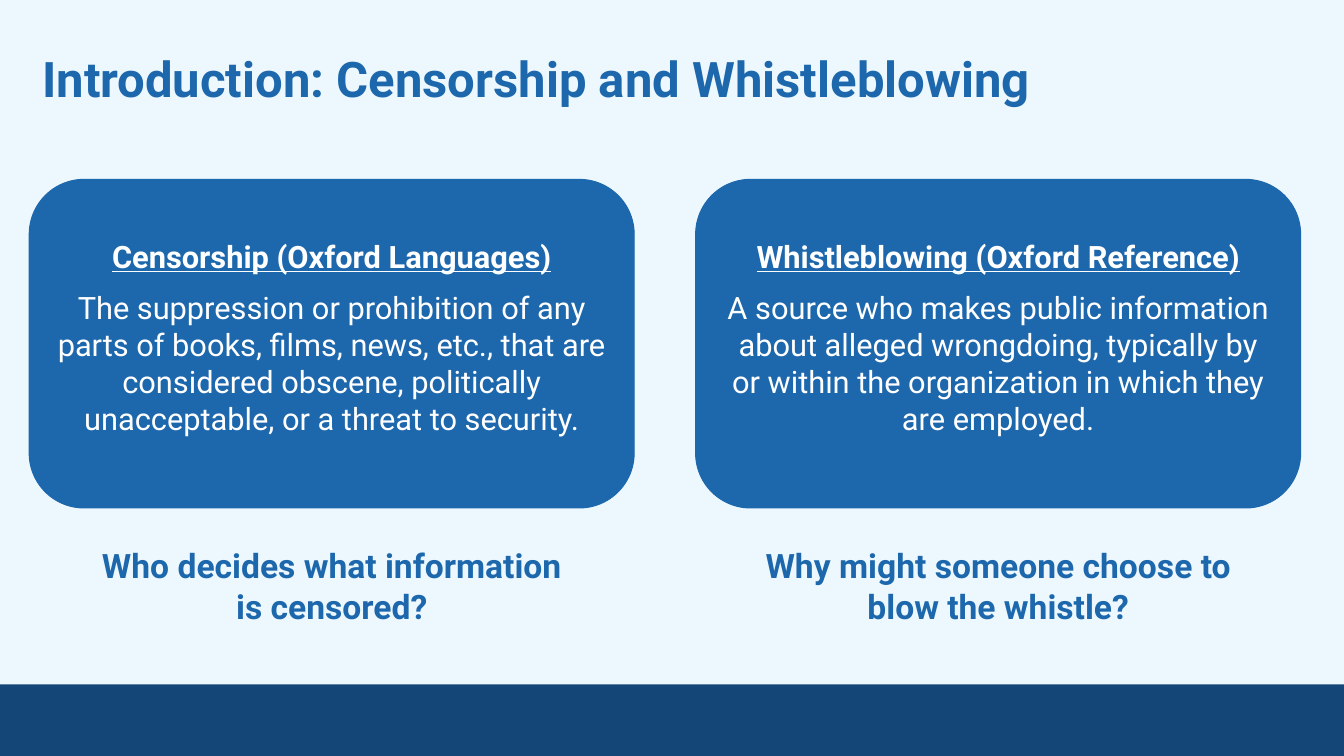
from pptx import Presentation
from pptx.dml.color import RGBColor
from pptx.enum.shapes import MSO_SHAPE
from pptx.enum.text import MSO_ANCHOR, PP_ALIGN
from pptx.util import Inches, Pt

COLORS = {"background": "ECF8FE", "blue": "1D67AC", "navy": "144777", "white": "FFFFFF"}
COLUMNS = [
    (
        0.29,
        0.63,
        "Censorship (Oxford Languages)",
        "The suppression or prohibition of any parts of books, films, news, etc., that are "
        "considered obscene, politically unacceptable, or a threat to security.",
        ["Who decides what information", "is censored?"],
    ),
    (
        6.9,
        7.24,
        "Whistleblowing (Oxford Reference)",
        "A source who makes public information about alleged wrongdoing, typically by or "
        "within the organization in which they are employed.",
        ["Why might someone choose to blow the whistle?"],
    ),
]


def add_span(para, text, size, color, bold=True, align=PP_ALIGN.CENTER):
    """Add one formatted run and align its paragraph."""
    para.alignment = align
    span = para.add_run()
    span.text = text
    span.font.name = "Roboto"
    span.font.size = Pt(size)
    span.font.bold = bold
    span.font.color.rgb = RGBColor.from_string(COLORS[color])
    return span


def add_panel(kind, left, top, width, height, color):
    panel = page.shapes.add_shape(kind, Inches(left), Inches(top), Inches(width), Inches(height))
    panel.shadow.inherit = False
    panel.fill.solid()
    panel.fill.fore_color.rgb = RGBColor.from_string(COLORS[color])
    panel.line.color.rgb = RGBColor.from_string(COLORS[color])
    panel.line.width = Pt(0.75)
    return panel


deck = Presentation()
deck.slide_width, deck.slide_height = Inches(13.33), Inches(7.5)
page = deck.slides.add_slide(deck.slide_layouts[5])
page.background.fill.solid()
page.background.fill.fore_color.rgb = RGBColor.from_string(COLORS["background"])

footer_band = add_panel(MSO_SHAPE.RECTANGLE, 0, 6.79, 13.33, 0.71, "navy")
footer_band.line.fill.background()

title = page.shapes.title
title.left, title.top = Inches(0.29), Inches(0.35)
title.width, title.height = Inches(12.19), Inches(0.86)
frame = title.text_frame
frame.vertical_anchor = MSO_ANCHOR.TOP
frame.margin_left = frame.margin_right = frame.margin_top = frame.margin_bottom = Inches(0.13)
add_span(frame.paragraphs[0], "Introduction: Censorship and Whistleblowing", 35, "blue",
         align=PP_ALIGN.LEFT)

for card_left, question_left, term, definition, question in COLUMNS:
    card = add_panel(MSO_SHAPE.ROUNDED_RECTANGLE, card_left, 1.78, 6, 3.26, "blue")
    card.adjustments[0] = 0.167
    frame = card.text_frame
    frame.word_wrap = True
    frame.vertical_anchor = MSO_ANCHOR.MIDDLE
    frame.margin_left = frame.margin_right = frame.margin_top = Inches(0.1)
    frame.margin_bottom = Inches(0.23)
    add_span(frame.paragraphs[0], term, 22, "white").font.underline = True
    para = frame.add_paragraph()
    para.space_before = Pt(10)
    add_span(para, definition, 22, "white", bold=False)

    box = page.shapes.add_textbox(Inches(question_left), Inches(5.31), Inches(5.32), Inches(1.01))
    frame = box.text_frame
    frame.word_wrap = True
    frame.margin_left = frame.margin_right = frame.margin_top = frame.margin_bottom = Inches(0.1)
    for index, line in enumerate(question):
        para = frame.add_paragraph() if index else frame.paragraphs[0]
        add_span(para, line, 24, "blue")

deck.save("out.pptx")
